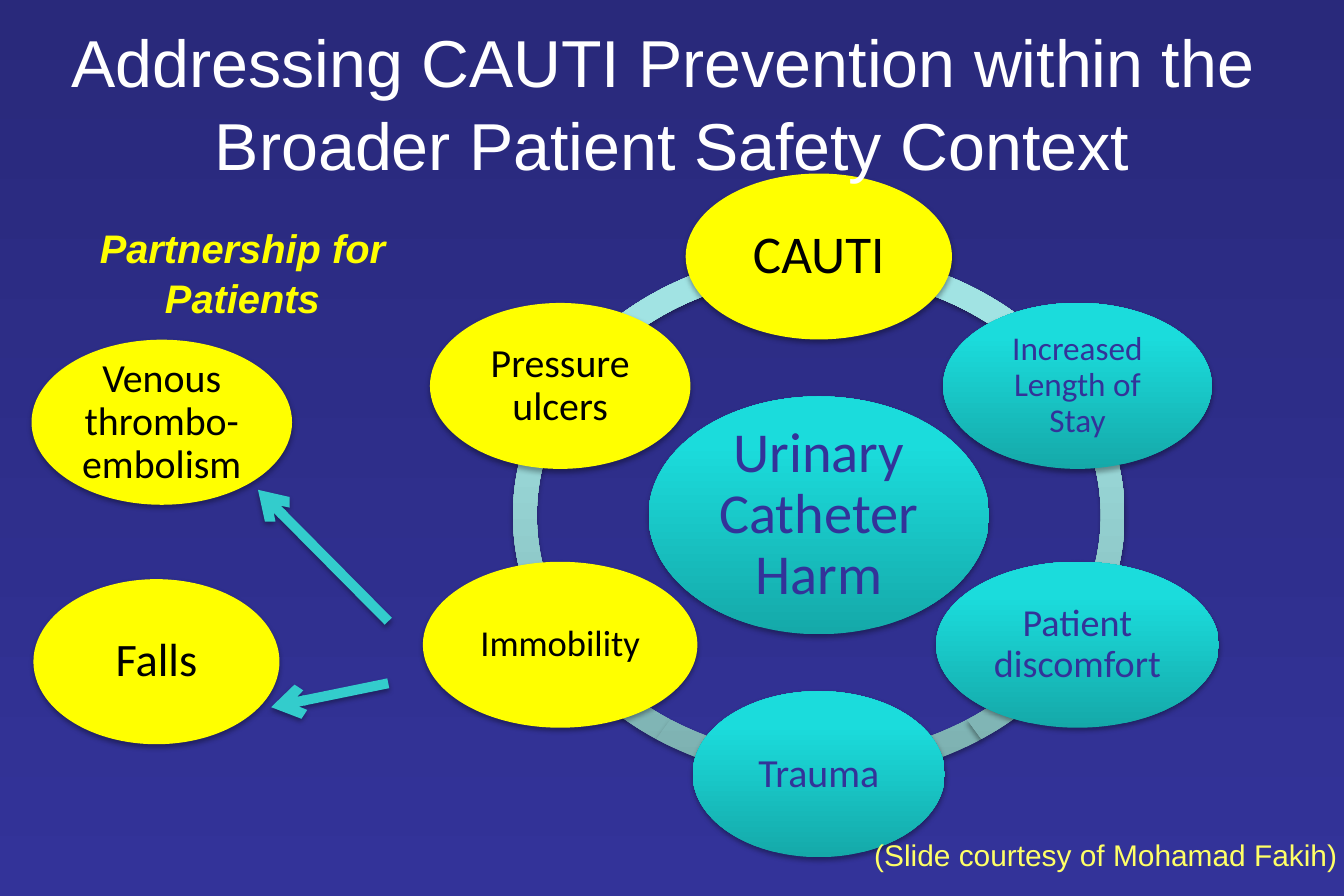
"""Build the slide on CAUTI prevention and the harms of urinary catheters."""
import math

import pptx
import pptx.dml.color
import pptx.enum.shapes
import pptx.enum.text
import pptx.oxml
import pptx.oxml.ns
import pptx.util

Pt = pptx.util.Pt
SHAPES = pptx.enum.shapes.MSO_SHAPE
COLORS = {"night": "29297B", "indigo": "333399", "yellow": "FFFF00", "black": "000000",
          "white": "FFFFFF", "credit": "FFFF66", "arrow": "33CCCC", "ring_low": "7CAFAF",
          "ring_high": "A1E3E3", "teal_low": "15A9A9", "teal_high": "1BDCDC"}
RGB = {name: pptx.dml.color.RGBColor.from_string(code) for name, code in COLORS.items()}


def finish(shape, colors):
    """Fill a shape with one colour or an upward gradient, and give it a soft shadow."""
    properties = shape.element.spPr
    if colors:
        if len(colors) == 1:
            shape.fill.solid()
            shape.fill.fore_color.rgb = RGB[colors[0]]
        else:
            shape.fill.gradient()
            shape.fill.gradient_angle = 90
            for stop, color, position in zip(shape.fill.gradient_stops, colors, (0, 0.8)):
                stop.color.rgb = RGB[color]
                stop.position = position
        shape.line.fill.background()
    namespace = pptx.oxml.ns.nsdecls("a")
    properties.append(pptx.oxml.parse_xml(
        f'<a:effectLst {namespace}><a:outerShdw blurRad="40000" dist="23000" dir="5400000" '
        'rotWithShape="0"><a:srgbClr val="000000"><a:alpha val="35000"/></a:srgbClr>'
        '</a:outerShdw></a:effectLst>'))


def write(shape, text, color, inset, spacing, font):
    """Put one centred paragraph in a shape."""
    frame = shape.text_frame
    frame.word_wrap = True
    frame.vertical_anchor = pptx.enum.text.MSO_ANCHOR.MIDDLE
    for side, margin in zip(("left", "right", "top", "bottom"), inset):
        setattr(frame, f"margin_{side}", Pt(margin))
    frame.text = text
    para = frame.paragraphs[0]
    para.alignment = pptx.enum.text.PP_ALIGN.CENTER
    para.line_spacing = spacing
    for span in para.runs:
        span.font.color.rgb = RGB[color]
        for name, value in font.items():
            setattr(span.font, name, value)
    return para


deck = pptx.Presentation()
deck.slide_width, deck.slide_height = Pt(810), Pt(540)
page = deck.slides.add_slide(deck.slide_layouts[6])
background = page.background.fill
background.gradient()
background.gradient_angle = 270
for stop, color, position in zip(background.gradient_stops, ("night", "indigo"), (0, 1)):
    stop.color.rgb = RGB[color]
    stop.position = position

center_x, center_y = 493.5, 310.6
orbit_x, orbit_y = 180, 156
ring_width, ring_height = 368.6, 318.2
for start, end in ((126, 162), (90, 126), (54, 90), (18, 54), (198, 18), (162, 198)):
    arc = page.shapes.add_shape(
        SHAPES.BLOCK_ARC, Pt(center_x - ring_width / 2), Pt(center_y - ring_height / 2),
        Pt(ring_width), Pt(ring_height))
    for index, value in enumerate((start * 0.6, end * 0.6, 0.045)):
        arc.adjustments[index] = value
    finish(arc, ("ring_low", "ring_high"))

teal = ("teal_low", "teal_high")
yellow = ("yellow",)
harms = [("CAUTI", 160.5, 32, yellow), ("Increased Length of Stay", 162, 20, teal),
         ("Patient discomfort", 170.5, 23, teal), ("Trauma", 152, 24, teal),
         ("Immobility", 165.5, 22, yellow), ("Pressure ulcers", 157, 24, yellow)]
ovals = [("Falls", 94.3, 398.8, 148.3, 99.5, 28, yellow),
         ("Urinary Catheter Harm", center_x, center_y, 205.2, 143.3, 34, teal)]
for index, (text, width, size, colors) in enumerate(harms):
    angle = index * math.tau / len(harms)
    ovals.append((text, center_x + orbit_x * math.sin(angle),
                  center_y - orbit_y * math.cos(angle), width, 100, size, colors))
ovals.append(("Venous thrombo-embolism", 97.5, 254.5, 157, 99.5, 24, yellow))
for text, middle_x, middle_y, width, height, size, colors in ovals:
    oval = page.shapes.add_shape(SHAPES.OVAL, Pt(middle_x - width / 2),
                                 Pt(middle_y - height / 2), Pt(width), Pt(height))
    finish(oval, colors)
    write(oval, text, "indigo" if colors == teal else "black", (2.2,) * 4, 0.9,
          {"name": "Calibri", "size": Pt(size)})

for ends in ((234, 374.4, 155.5, 295.2), (234, 411.8, 163.4, 426.2)):
    arrow = page.shapes.add_connector(pptx.enum.shapes.MSO_CONNECTOR.STRAIGHT, *map(Pt, ends))
    arrow.line.color.rgb = RGB["arrow"]
    arrow.line.width = Pt(6)
    arrow.line._get_or_add_ln().append(pptx.oxml.parse_xml(
        f'<a:tailEnd {pptx.oxml.ns.nsdecls("a")} type="arrow"/>'))
    finish(arrow, ())

labels = [
    ("Partnership for Patients", (18.7, 131, 254.9, 65.5), "yellow",
     {"size": Pt(24), "bold": True, "italic": True}),
    ("Addressing CAUTI Prevention within the \vBroader Patient Safety Context",
     (0, 18.7, 810, 83.5), "white", {"size": Pt(40)}),
    ("(Slide courtesy of Mohamad Fakih)", (519.8, 500.4, 307.4, 28.8), "credit",
     {"size": Pt(18)})]
for text, place, color, font in labels:
    label = page.shapes.add_textbox(*map(Pt, place))
    para = write(label, text, color, (7.2, 7.2, 3.6, 3.6), 1.05, {"name": "Arial", **font})
para.alignment = pptx.enum.text.PP_ALIGN.LEFT

deck.save("out.pptx")
